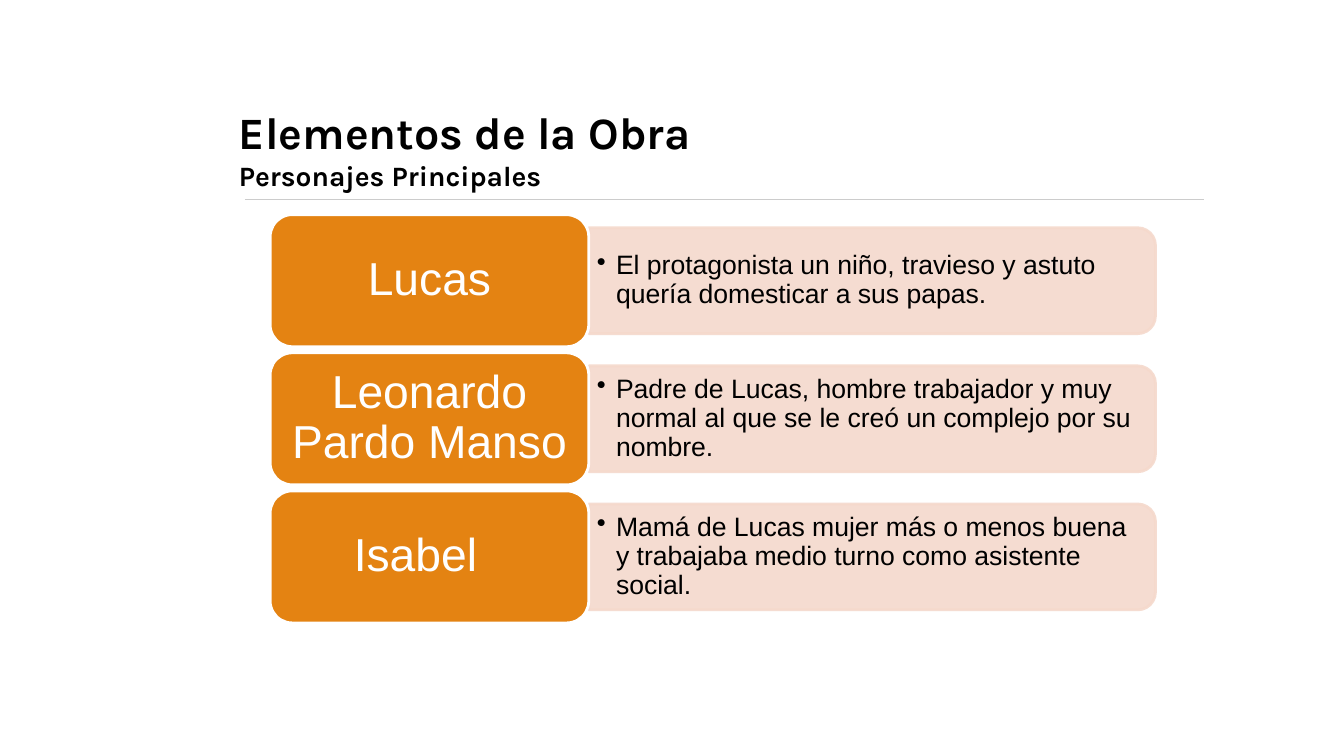
from lxml import etree
from pptx import Presentation
from pptx.dml.color import RGBColor
from pptx.enum import shapes, text
from pptx.oxml import ns
from pptx.util import Inches, Pt

BLACK = RGBColor(0x00, 0x00, 0x00)
WHITE = RGBColor(0xFF, 0xFF, 0xFF)
ORANGE = RGBColor(0xE4, 0x83, 0x12)
PINK = RGBColor(0xF5, 0xD9, 0xCC)
GREY = RGBColor(0xCC, 0xCC, 0xCC)

CHARACTERS = [
    ("Lucas",
     "El protagonista un niño, travieso y astuto quería domesticar a sus papas."),
    ("Leonardo Pardo Manso",
     "Padre de Lucas, hombre trabajador y muy normal al que se le creó un "
     "complejo por su nombre."),
    ("Isabel \t",
     "Mamá de Lucas mujer más o menos buena y trabajaba medio turno como "
     "asistente social."),
]
FIRST_TOP, ROW_PITCH = 2.13, 1.37
NAME_LEFT, NAME_WIDTH, NAME_HEIGHT = 2.68, 3.16, 1.31
PANEL_LEFT, PANEL_WIDTH, PANEL_HEIGHT = 5.84, 5.62, 1.05
DETAIL_WIDTH, DETAIL_HEIGHT = 5.57, 0.94


def set_frame(frame, anchor, inset_x, inset_y):
    frame.word_wrap = True
    frame.vertical_anchor = anchor
    frame.margin_left = frame.margin_right = Inches(inset_x)
    frame.margin_top = frame.margin_bottom = Inches(inset_y)


def set_font(font, name, size, color, bold=False):
    font.name = name
    font.size = Pt(size)
    font.color.rgb = color
    font.bold = bold


def add_filled_shape(slide, kind, left, top, width, height, fill, line):
    shape = slide.shapes.add_shape(
        kind, Inches(left), Inches(top), Inches(width), Inches(height))
    shape.shadow.inherit = False
    shape.fill.solid()
    shape.fill.fore_color.rgb = fill
    shape.line.color.rgb = line
    shape.line.width = Pt(2)
    return shape


def add_title(slide, heading, subheading):
    box = slide.shapes.add_textbox(
        Inches(2.27), Inches(0.99), Inches(9.65), Inches(1.02))
    set_frame(box.text_frame, text.MSO_ANCHOR.BOTTOM, 0.1, 0.1)
    paragraph = box.text_frame.paragraphs[0]
    heading_run = paragraph.add_run()
    heading_run.text = heading
    set_font(heading_run.font, "Karla", 32, BLACK, bold=True)
    paragraph.add_line_break()
    subheading_run = paragraph.add_run()
    subheading_run.text = subheading
    set_font(subheading_run.font, "Karla", 20, BLACK, bold=True)


def add_title_rule(slide):
    rule = slide.shapes.add_connector(
        shapes.MSO_CONNECTOR.STRAIGHT,
        Inches(2.43), Inches(1.98), Inches(11.94), Inches(1.98))
    rule.line.color.rgb = GREY
    rule.line.width = Pt(0.75)
    etree.SubElement(rule._element.spPr, ns.qn("a:effectLst"))


def add_panel(slide, middle):
    """Add the pale panel, a top-rounded rectangle turned to the right."""
    center_x = PANEL_LEFT + PANEL_WIDTH / 2
    panel = add_filled_shape(
        slide, shapes.MSO_SHAPE.ROUND_2_SAME_RECTANGLE,
        center_x - PANEL_HEIGHT / 2, middle - PANEL_WIDTH / 2,
        PANEL_HEIGHT, PANEL_WIDTH, PINK, PINK)
    panel.rotation = 90
    for color in panel._element.spPr.iter(ns.qn("a:srgbClr")):
        etree.SubElement(color, ns.qn("a:alpha"), val="90000")


def add_detail(slide, middle, detail):
    box = slide.shapes.add_textbox(
        Inches(PANEL_LEFT), Inches(middle - DETAIL_HEIGHT / 2),
        Inches(DETAIL_WIDTH), Inches(DETAIL_HEIGHT))
    set_frame(box.text_frame, text.MSO_ANCHOR.MIDDLE, 0.08, 0.04)
    paragraph = box.text_frame.paragraphs[0]
    paragraph.text = detail
    paragraph.line_spacing = 0.9
    properties = paragraph._p.get_or_add_pPr()
    properties.set("marL", str(Inches(0.19)))
    properties.set("indent", str(-Inches(0.19)))
    etree.SubElement(properties, ns.qn("a:buChar"), char="•")
    set_font(paragraph.font, "Arial", 19, BLACK)


def add_name(slide, top, name):
    card = add_filled_shape(
        slide, shapes.MSO_SHAPE.ROUNDED_RECTANGLE,
        NAME_LEFT, top, NAME_WIDTH, NAME_HEIGHT, ORANGE, WHITE)
    set_frame(card.text_frame, text.MSO_ANCHOR.MIDDLE, 0.14, 0.07)
    paragraph = card.text_frame.paragraphs[0]
    paragraph.text = name
    paragraph.alignment = text.PP_ALIGN.CENTER
    paragraph.line_spacing = 0.9
    set_font(paragraph.font, "Arial", 33, WHITE)


def main():
    presentation = Presentation()
    presentation.slide_width = Inches(13.33)
    presentation.slide_height = Inches(7.5)
    slide = presentation.slides.add_slide(presentation.slide_layouts[6])

    add_title_rule(slide)
    add_title(slide, "Elementos de la Obra", "Personajes Principales")
    for row, (name, detail) in enumerate(CHARACTERS):
        top = FIRST_TOP + row * ROW_PITCH
        middle = top + NAME_HEIGHT / 2
        add_panel(slide, middle)
        add_detail(slide, middle, detail)
        add_name(slide, top, name)

    presentation.save("out.pptx")


if __name__ == "__main__":
    main()
